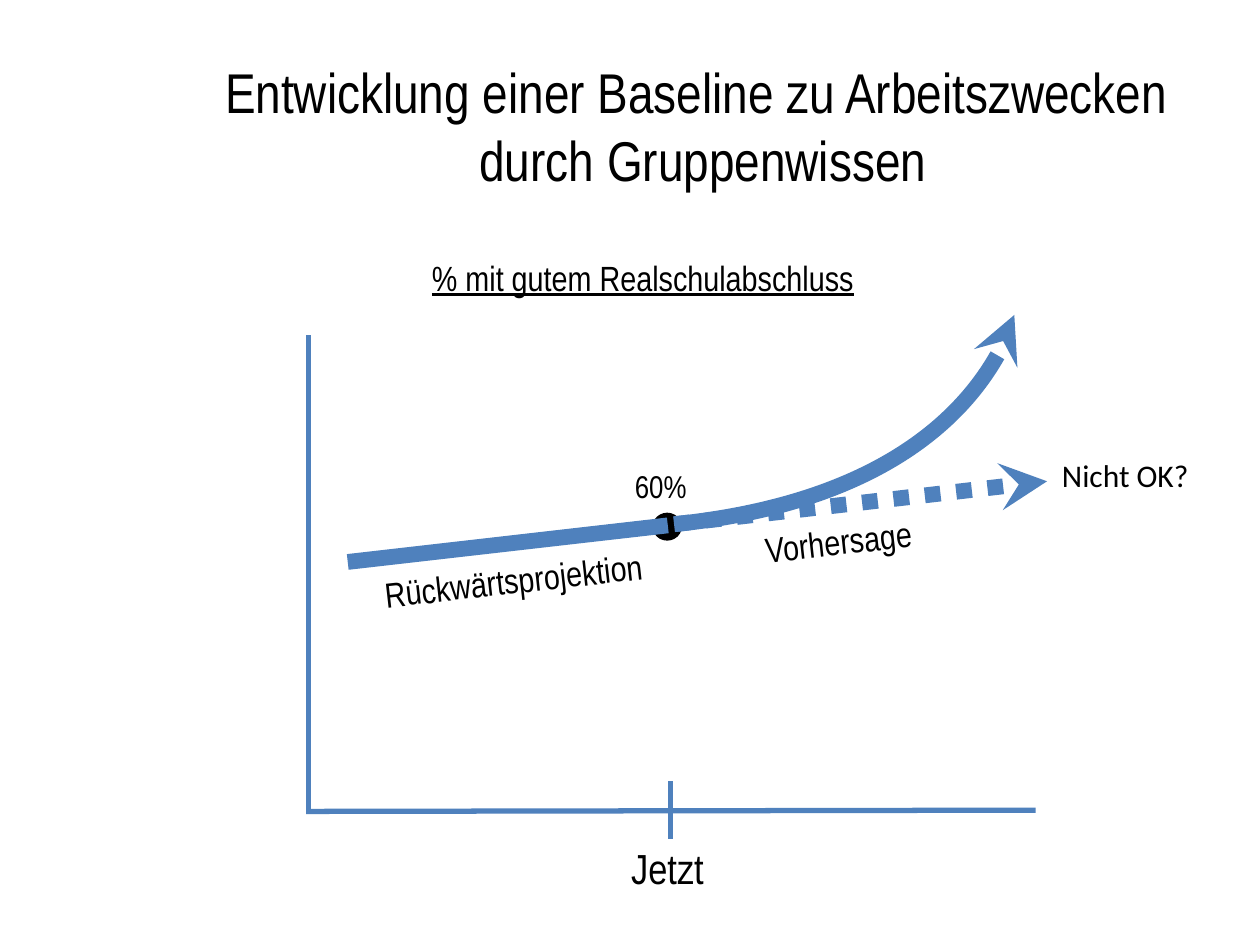
from lxml import etree
from pptx import Presentation
from pptx.dml.color import RGBColor
from pptx.enum.dml import MSO_LINE
from pptx.enum.shapes import MSO_CONNECTOR, MSO_SHAPE
from pptx.enum.text import PP_ALIGN
from pptx.oxml.ns import qn
from pptx.util import Inches, Pt

BLUE = RGBColor(0x4F, 0x81, 0xBD)
BLACK = RGBColor(0, 0, 0)
DOTTED = MSO_LINE.ROUND_DOT
STRAIGHT = MSO_CONNECTOR.STRAIGHT
OVAL = MSO_SHAPE.OVAL
LEFT, CENTER = PP_ALIGN.LEFT, PP_ALIGN.CENTER
AXIS, TREND = 3, 9


class BaselineSlide:
    """Holds the style and the current slide, and draws each kind of element."""

    def __init__(self, prs, font="Arial Narrow"):
        self.shapes = prs.slides.add_slide(prs.slide_layouts[6]).shapes
        self.font = font

    def text(self, text, x, y, w, h, size, align=LEFT, font=None, underline=None, rotation=0):
        sp = self.shapes.add_textbox(Inches(x), Inches(y), Inches(w), Inches(h))
        sp.rotation = rotation
        tf = sp.text_frame
        tf.word_wrap = True
        p = tf.paragraphs[0]
        p.text = text
        p.alignment = align
        p.font.name = font or self.font
        p.font.size = Pt(size)
        p.font.color.rgb = BLACK
        p.font.underline = underline

    def stroke(self, sp, width, color=BLUE):
        sp.line.color.rgb = color
        sp.line.width = Pt(width)

    def arrowhead(self, sp, end):
        ln = sp.line._get_or_add_ln()
        etree.SubElement(ln, qn(end), type="stealth")

    def line(self, x1, y1, x2, y2, width, dash=None, head=False):
        sp = self.shapes.add_connector(STRAIGHT, Inches(x1), Inches(y1), Inches(x2), Inches(y2))
        self.stroke(sp, width)
        if dash:
            sp.line.dash_style = dash
        if head:
            self.arrowhead(sp, "a:headEnd")
        etree.SubElement(sp._element.spPr, qn("a:effectLst"))

    def dot(self, x, y, w, h):
        sp = self.shapes.add_shape(OVAL, Inches(x), Inches(y), Inches(w), Inches(h))
        sp.shadow.inherit = False
        sp.fill.solid()
        sp.fill.fore_color.rgb = BLACK
        self.stroke(sp, AXIS, BLACK)

    def curve(self, start, controls, width):
        builder = self.shapes.build_freeform(Inches(start[0]), Inches(start[1]))
        builder.add_line_segments([(Inches(x), Inches(y)) for x, y in controls], close=False)
        sp = builder.convert_to_shape()
        sp.shadow.inherit = False
        sp.fill.background()
        self.stroke(sp, width)
        self.arrowhead(sp, "a:tailEnd")
        segments = list(sp._element.iter(qn("a:lnTo")))
        bezier = etree.SubElement(segments[0].getparent(), qn("a:cubicBezTo"))
        for segment in segments:
            bezier.append(segment[0])
            segment.getparent().remove(segment)


def main():
    prs = Presentation()
    prs.slide_width, prs.slide_height = Inches(10), Inches(7.5)
    s = BaselineSlide(prs)

    s.text("Entwicklung einer Baseline zu Arbeitszwecken \vdurch Gruppenwissen",
           1.56, 0.41, 8.04, 1.18, 32, align=CENTER)
    s.line(2.45, 2.66, 2.45, 6.42, AXIS)
    s.line(2.43, 6.44, 8.22, 6.43, AXIS)
    s.line(5.32, 6.2, 5.32, 6.66, AXIS)
    s.text("Jetzt", 4.91, 6.64, 1.49, 0.5, 24)
    s.text("% mit gutem Realschulabschluss", 3.33, 1.99, 4.27, 0.43, 20, underline=True)

    s.dot(5.2, 4.09, 0.19, 0.18)
    s.text("60%", 4.94, 3.66, 0.84, 0.4, 18)
    s.line(5.3, 4.17, 2.76, 4.46, TREND)
    s.line(8.31, 3.82, 5.27, 4.17, TREND, dash=DOTTED, head=True)
    s.text("Nicht OK?", 8.33, 3.57, 1.22, 0.4, 18, font="Calibri")
    s.curve((5.36, 4.16), [(6.71, 4.02), (7.82, 3.34), (8.05, 2.5)], TREND)

    s.text("Rückwärtsprojektion", 2.95, 4.38, 2.37, 0.44, 20, rotation=353.6)
    s.text("Vorhersage", 5.97, 4.05, 1.9, 0.43, 20, rotation=353.6)
    prs.save("out.pptx")


if __name__ == "__main__":
    main()
